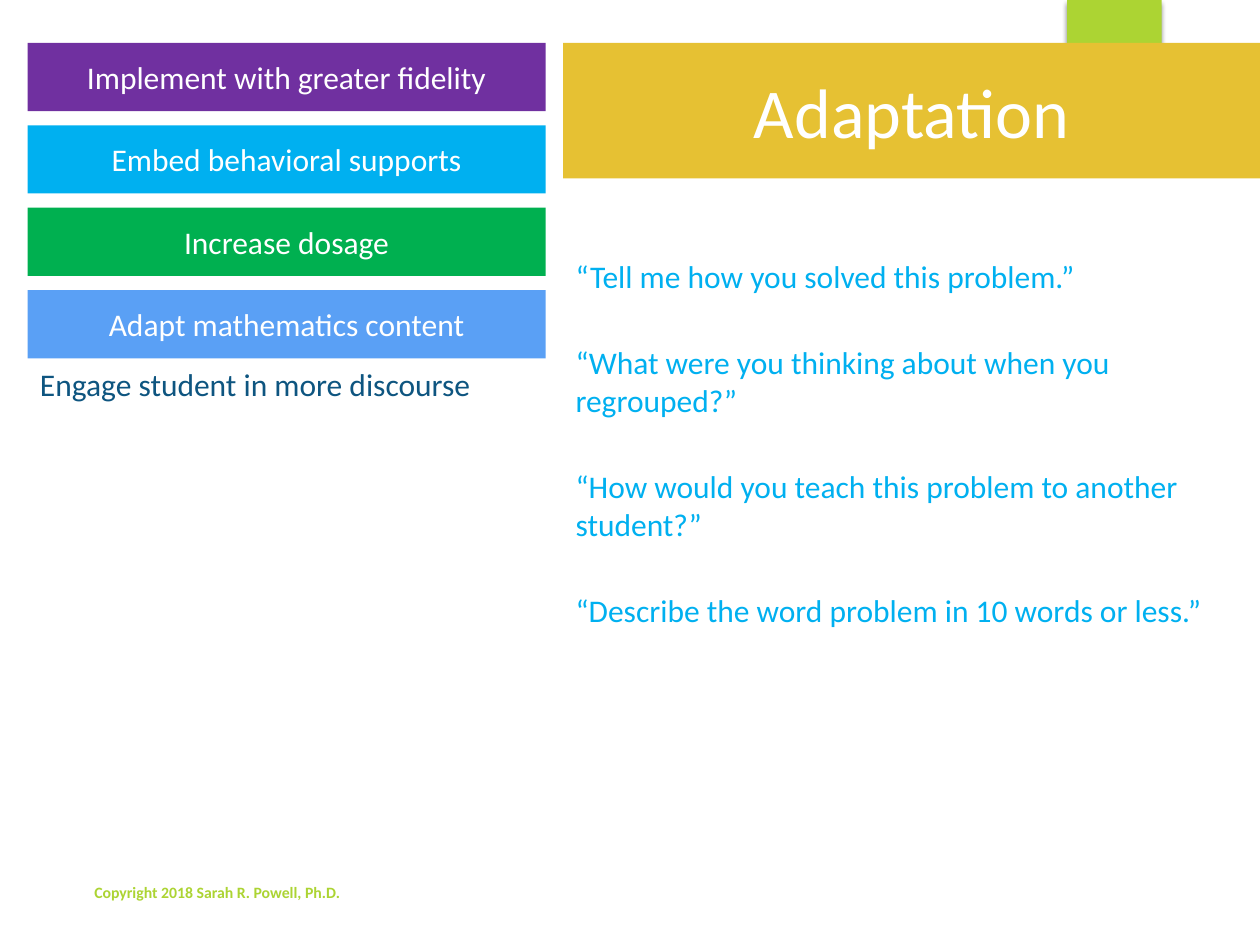
import pptx
import pptx.dml.color
import pptx.enum.shapes
import pptx.enum.text
import pptx.oxml
import pptx.util
from dataclasses import dataclass

Pt = pptx.util.Pt
ANCHOR = pptx.enum.text.MSO_ANCHOR
ALIGN = pptx.enum.text.PP_ALIGN
FIT = pptx.enum.text.MSO_AUTO_SIZE

# Content
TITLE = "Adaptation"
STRATEGIES = [
    ("Implement with greater fidelity", "7030A0"),
    ("Embed behavioral supports", "00B0F0"),
    ("Increase dosage", "00B050"),
    ("Adapt mathematics content", "5AA0F5"),
]
DETAIL = "Engage student in more discourse"
QUOTES = [  # wording, number of lines
    ("“Tell me how you solved this problem.”", 1),
    ("“What were you thinking about when you regrouped?”", 2),
    ("“How would you teach this problem to another student?”", 2),
    ("“Describe the word problem in 10 words or less.”", 1),
]
COPYRIGHT = "Copyright 2018 Sarah R. Powell, Ph.D."


@dataclass(frozen=True)
class Theme:
    font: str = "Calibri"
    title_size: int = 40
    body_size: int = 18
    footer_size: int = 9
    white: str = "FFFFFF"
    gold: str = "E6C133"
    lime: str = "ACD433"
    navy: str = "0E5580"
    sky: str = "00B0F0"


THEME = Theme()

# Layout
LEFT_X, LEFT_W = 15.8, 296
RIGHT_X, TOP = 321.8, 24.5
BAR_H, BAR_PITCH = 39, 47.1
QUOTE_TOP, QUOTE_W, QUOTE_GAP = 143.3, 375, 20
LINE_H = {1: 29, 2: 51}

SHADOW = (
    '<a:effectLst xmlns:a="http://schemas.openxmlformats.org/drawingml/2006/main">'
    '<a:outerShdw blurRad="38100" dist="25400" dir="5400000" rotWithShape="0">'
    '<a:srgbClr val="000000"><a:alpha val="45000"/></a:srgbClr>'
    "</a:outerShdw></a:effectLst>"
)


def rgb(color):
    return pptx.dml.color.RGBColor.from_string(color)


def paint(shape, color):
    shape.fill.solid()
    shape.fill.fore_color.rgb = rgb(color)
    shape.line.fill.background()


def write(shape, text, size, color, align=ALIGN.LEFT, anchor=ANCHOR.TOP, bold=False):
    frame = shape.text_frame
    frame.text = text
    frame.word_wrap = True
    frame.auto_size = FIT.NONE
    frame.vertical_anchor = anchor
    paragraph = frame.paragraphs[0]
    paragraph.alignment = align
    font = paragraph.runs[0].font
    font.name, font.size, font.bold = THEME.font, Pt(size), bold
    font.color.rgb = rgb(color)


def add_bar(slide, x, y, w, h, color):
    bar = slide.shapes.add_shape(
        pptx.enum.shapes.MSO_SHAPE.RECTANGLE, Pt(x), Pt(y), Pt(w), Pt(h))
    bar.shadow.inherit = False
    paint(bar, color)
    return bar


def add_text(slide, x, y, w, h, *args, **kwargs):
    box = slide.shapes.add_textbox(Pt(x), Pt(y), Pt(w), Pt(h))
    write(box, *args, **kwargs)
    return box


def main():
    deck = pptx.Presentation()
    deck.slide_width, deck.slide_height = Pt(720), Pt(540)
    slide = deck.slides.add_slide(deck.slide_layouts[5])

    # Title band
    title = slide.shapes.title
    title.left, title.top = Pt(RIGHT_X), Pt(TOP)
    title.width, title.height = Pt(720 - RIGHT_X), Pt(77.5)
    paint(title, THEME.gold)
    write(title, TITLE, THEME.title_size, THEME.white, ALIGN.CENTER, ANCHOR.MIDDLE)

    # Lime tab tucked behind the title band
    tab = add_bar(slide, 609.8, 0, 54, 86.4, THEME.lime)
    properties = tab.element.spPr
    properties.remove(properties[-1])
    properties.append(pptx.oxml.parse_xml(SHADOW))
    title.element.addprevious(tab.element)

    # Strategy bars and the detail below them
    for row, (strategy, color) in enumerate(STRATEGIES):
        bar = add_bar(slide, LEFT_X, TOP + row * BAR_PITCH, LEFT_W, BAR_H, color)
        write(bar, strategy, THEME.body_size, THEME.white, ALIGN.CENTER, ANCHOR.MIDDLE)
    detail_top = TOP + (len(STRATEGIES) - 1) * BAR_PITCH + BAR_H
    add_text(slide, LEFT_X, detail_top, LEFT_W, LINE_H[1],
             DETAIL, THEME.body_size, THEME.navy)

    # Quotes, stacked with equal gaps
    quote_top = QUOTE_TOP
    for quote, lines in QUOTES:
        add_text(slide, RIGHT_X, quote_top, QUOTE_W, LINE_H[lines],
                 quote, THEME.body_size, THEME.sky)
        quote_top += LINE_H[lines] + QUOTE_GAP

    # Copyright line
    add_text(slide, 46.8, 501, 304, 18, COPYRIGHT, THEME.footer_size, THEME.lime,
             anchor=ANCHOR.BOTTOM, bold=True)

    deck.save("out.pptx")


if __name__ == "__main__":
    main()
